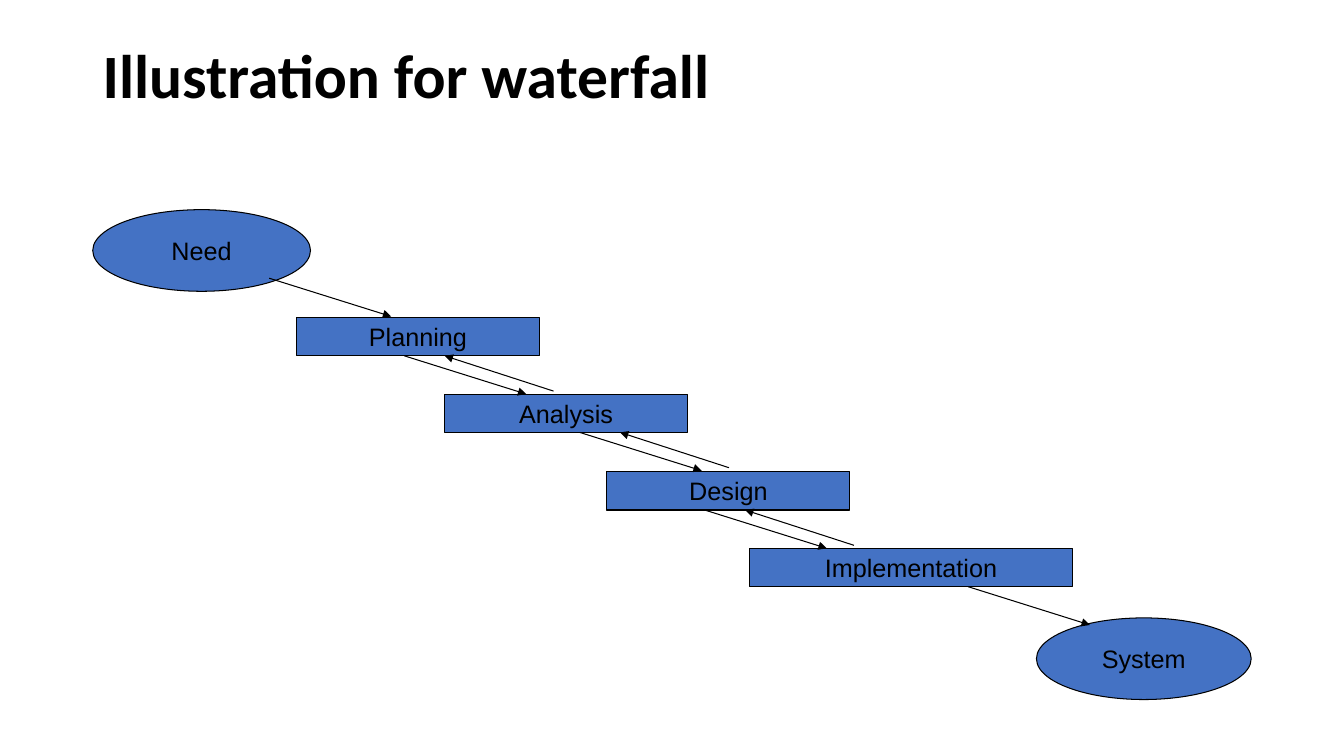
import pptx
import pptx.dml.color
import pptx.enum.shapes
import pptx.enum.text
import pptx.oxml
import pptx.oxml.ns
import pptx.util

PX = 9144
COLORS = {"fill": "4472C4", "ink": "000000"}
SHAPES = pptx.enum.shapes.MSO_SHAPE
STEP_HEIGHT = 38
STEPS = [("Planning", 202, 241), ("Analysis", 349, 241),
         ("Design", 510, 241), ("Implementation", 651, 321)]
ARROW_STARTS = [175, 309, 483, 607, 868]


def color(name):
    return pptx.dml.color.RGBColor.from_string(COLORS[name])


def emu(*lengths):
    return [length * PX for length in lengths]


def write(frame, text, font, size, bold=False):
    frame.text = text
    para = frame.paragraphs[0]
    span = para.runs[0]
    span.font.name = font
    span.font.size = pptx.util.Pt(size)
    span.font.bold = bold
    span.font.color.rgb = color("ink")
    return para


def draw_title(page, box):
    frame = page.shapes.add_textbox(*emu(*box)).text_frame
    frame.word_wrap = True
    frame.vertical_anchor = pptx.enum.text.MSO_ANCHOR.TOP
    para = write(frame, "Illustration for waterfall", "Calibri", 44, True)
    para.line_spacing = 0.9


def add_stage(shapes, kind, text, box):
    stage = shapes.add_shape(kind, *emu(*box))
    stage.shadow.inherit = False
    stage.fill.solid()
    stage.fill.fore_color.rgb = color("fill")
    stage.line.color.rgb = color("ink")
    stage.line.width = pptx.util.Pt(0.75)
    frame = stage.text_frame
    frame.word_wrap = False
    frame.vertical_anchor = pptx.enum.text.MSO_ANCHOR.MIDDLE
    para = write(frame, text, "Arial", 18)
    para.alignment = pptx.enum.text.PP_ALIGN.CENTER


def add_arrow(shapes, x, y, across, down):
    arrow = shapes.add_connector(
        pptx.enum.shapes.MSO_CONNECTOR.STRAIGHT, *emu(x, y, x + across, y + down))
    arrow.line.color.rgb = color("ink")
    arrow.line.width = pptx.util.Pt(0.75)
    head = pptx.oxml.parse_xml(
        f'<a:tailEnd {pptx.oxml.ns.nsdecls("a")} type="triangle"/>')
    arrow.line._get_or_add_ln().append(head)
    effects = pptx.oxml.parse_xml(f'<a:effectLst {pptx.oxml.ns.nsdecls("a")}/>')
    arrow._element.spPr.append(effects)


def draw_waterfall(page, box):
    left, top, width, height = box
    shapes = page.shapes.add_group_shape().shapes
    end_height = 81
    add_stage(shapes, SHAPES.OVAL, "Need", (left, top, 216, end_height))
    add_stage(shapes, SHAPES.OVAL, "System",
              (left + width - 213, top + height - end_height, 213, end_height))

    bottoms = [top + 68 + (153 * level + 1) // 2
               for level in range(len(ARROW_STARTS))]
    for (text, offset, step_width), bottom in zip(STEPS, bottoms[1:]):
        add_stage(shapes, SHAPES.RECTANGLE, text,
                  (left + offset, bottom - STEP_HEIGHT, step_width, STEP_HEIGHT))

    for level, (offset, bottom) in enumerate(zip(ARROW_STARTS, bottoms)):
        add_arrow(shapes, left + offset, bottom, 121, 38)
        if 0 < level < len(STEPS):
            add_arrow(shapes, left + offset + 148, bottom + 35, -108, -35)


def main():
    deck = pptx.Presentation()
    deck.slide_width, deck.slide_height = emu(1333, 750)
    page = deck.slides.add_slide(deck.slide_layouts[6])
    draw_title(page, (92, 40, 1150, 145))
    draw_waterfall(page, (92, 208, 1149, 486))
    deck.save("out.pptx")


if __name__ == "__main__":
    main()
